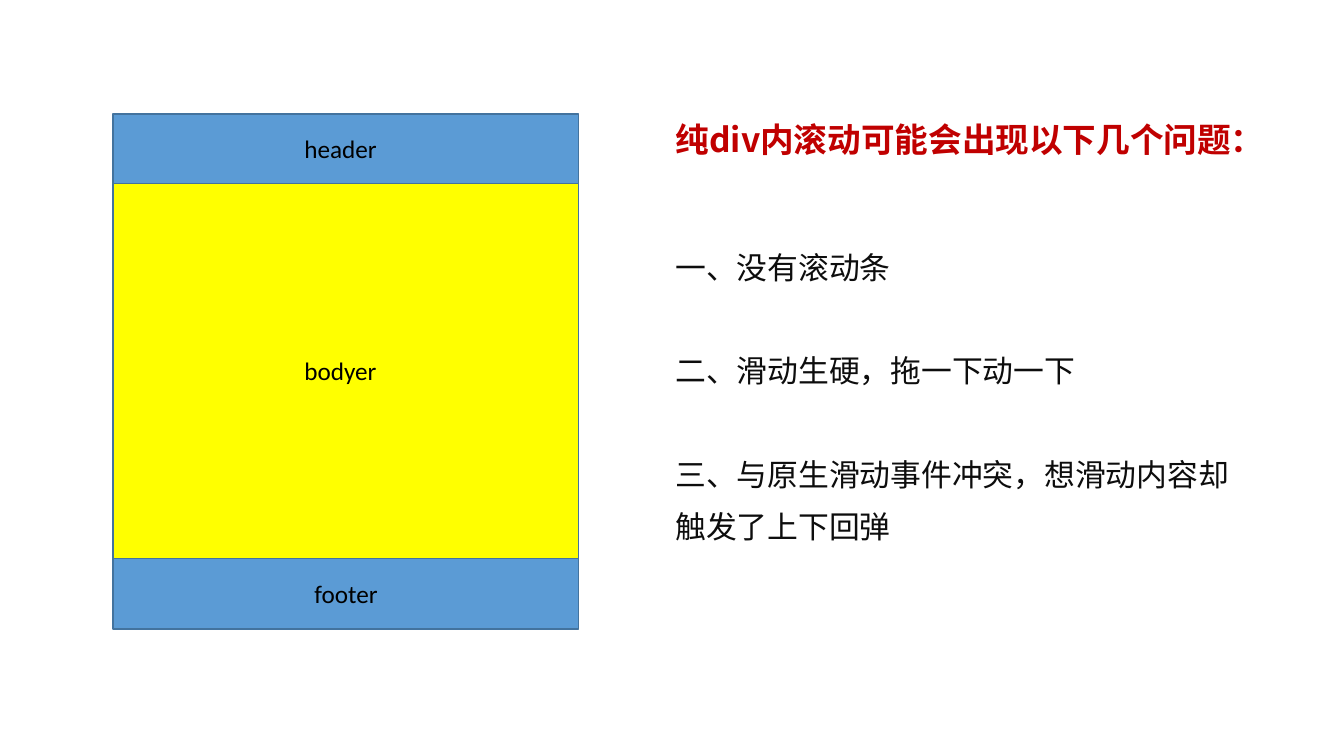
from pptx import Presentation
from pptx.dml.color import RGBColor
from pptx.enum.shapes import MSO_SHAPE
from pptx.enum.text import MSO_ANCHOR, MSO_AUTO_SIZE, PP_ALIGN
from pptx.oxml.ns import qn
from pptx.util import Inches, Pt
from lxml.etree import SubElement

BLUE = RGBColor(0x5B, 0x9B, 0xD5)
YELLOW = RGBColor(0xFF, 0xFF, 0x00)
OUTLINE = RGBColor(0x43, 0x73, 0x9E)
BLACK = RGBColor(0x00, 0x00, 0x00)
INK = RGBColor(0x0D, 0x0D, 0x0D)
RED = RGBColor(0xC0, 0x00, 0x00)
LATIN_FONT = "Calibri"
CHINESE_FONT = "Noto Sans CJK SC"

WIDTH, HEIGHT = 13.33, 7.5
PANEL_LEFT, PANEL_WIDTH = 1.12 / WIDTH, 4.62 / WIDTH
TEXT_LEFT = 6.6 / WIDTH
TOP = 1.13 / HEIGHT
LABEL_HEIGHT = 0.4 / HEIGHT

# name, height, fill, label left, label width
BANDS = [
    ("header", 0.69 / HEIGHT, BLUE, 2.92 / WIDTH, 0.92 / WIDTH),
    ("bodyer", 3.72 / HEIGHT, YELLOW, 2.92 / WIDTH, 0.92 / WIDTH),
    ("footer", 0.7 / HEIGHT, BLUE, 3.02 / WIDTH, 0.83 / WIDTH),
]
PROBLEMS = [
    "一、没有滚动条",
    "二、滑动生硬，拖一下动一下",
    "三、与原生滑动事件冲突，想滑动内容却触发了上下回弹",
]


class Page:
    """Draws on one slide; lengths are shares of the slide's size."""

    def __init__(self, deck):
        self.slide = deck.slides.add_slide(deck.slide_layouts[5])

    def place(self, left, top, width, height):
        return (Inches(left * WIDTH), Inches(top * HEIGHT),
                Inches(width * WIDTH), Inches(height * HEIGHT))

    def add_span(self, para, text, size, color, font, bold=False):
        para.alignment = PP_ALIGN.LEFT
        span = para.add_run()
        span.text = text
        span.font.size = Pt(size)
        span.font.bold = bold
        span.font.color.rgb = color
        span.font.name = font
        SubElement(span.font._element, qn("a:ea")).set("typeface", font)

    def frame(self, box, wrap):
        frame = box.text_frame
        frame.word_wrap = wrap
        frame.auto_size = MSO_AUTO_SIZE.SHAPE_TO_FIT_TEXT
        frame.vertical_anchor = MSO_ANCHOR.TOP
        return frame

    def title(self, text, *area):
        box = self.slide.shapes.title
        box.left, box.top, box.width, box.height = self.place(*area)
        para = self.frame(box, False).paragraphs[0]
        self.add_span(para, text, 24, RED, CHINESE_FONT, True)

    def band(self, fill, *area):
        box = self.slide.shapes.add_shape(MSO_SHAPE.RECTANGLE, *self.place(*area))
        box.shadow.inherit = False
        box.fill.solid()
        box.fill.fore_color.rgb = fill
        box.line.color.rgb = OUTLINE
        box.line.width = Pt(1)

    def label(self, text, *area):
        box = self.slide.shapes.add_textbox(*self.place(*area))
        para = self.frame(box, False).paragraphs[0]
        self.add_span(para, text, 18, BLACK, LATIN_FONT)

    def problems(self, texts, *area):
        box = self.slide.shapes.add_textbox(*self.place(*area))
        frame = self.frame(box, True)
        for index, text in enumerate(texts):
            para = frame.add_paragraph() if index else frame.paragraphs[0]
            para.line_spacing = 1.4
            para.space_before = Pt(37 if index else 0)
            self.add_span(para, text, 22, INK, CHINESE_FONT)


def main():
    deck = Presentation()
    deck.slide_width, deck.slide_height = Inches(WIDTH), Inches(HEIGHT)
    page = Page(deck)
    top = TOP
    for name, height, fill, label_left, label_width in BANDS:
        page.band(fill, PANEL_LEFT, top, PANEL_WIDTH, height)
        label_top = top + (height - LABEL_HEIGHT) / 2
        page.label(name, label_left, label_top, label_width, LABEL_HEIGHT)
        top += height
    page.title("纯div内滚动可能会出现以下几个问题：", TEXT_LEFT, TOP, 6.05 / WIDTH, 0.5 / HEIGHT)
    page.problems(PROBLEMS, TEXT_LEFT, 2.27 / HEIGHT, 5.77 / WIDTH, 3.21 / HEIGHT)
    deck.save("out.pptx")


if __name__ == "__main__":
    main()
